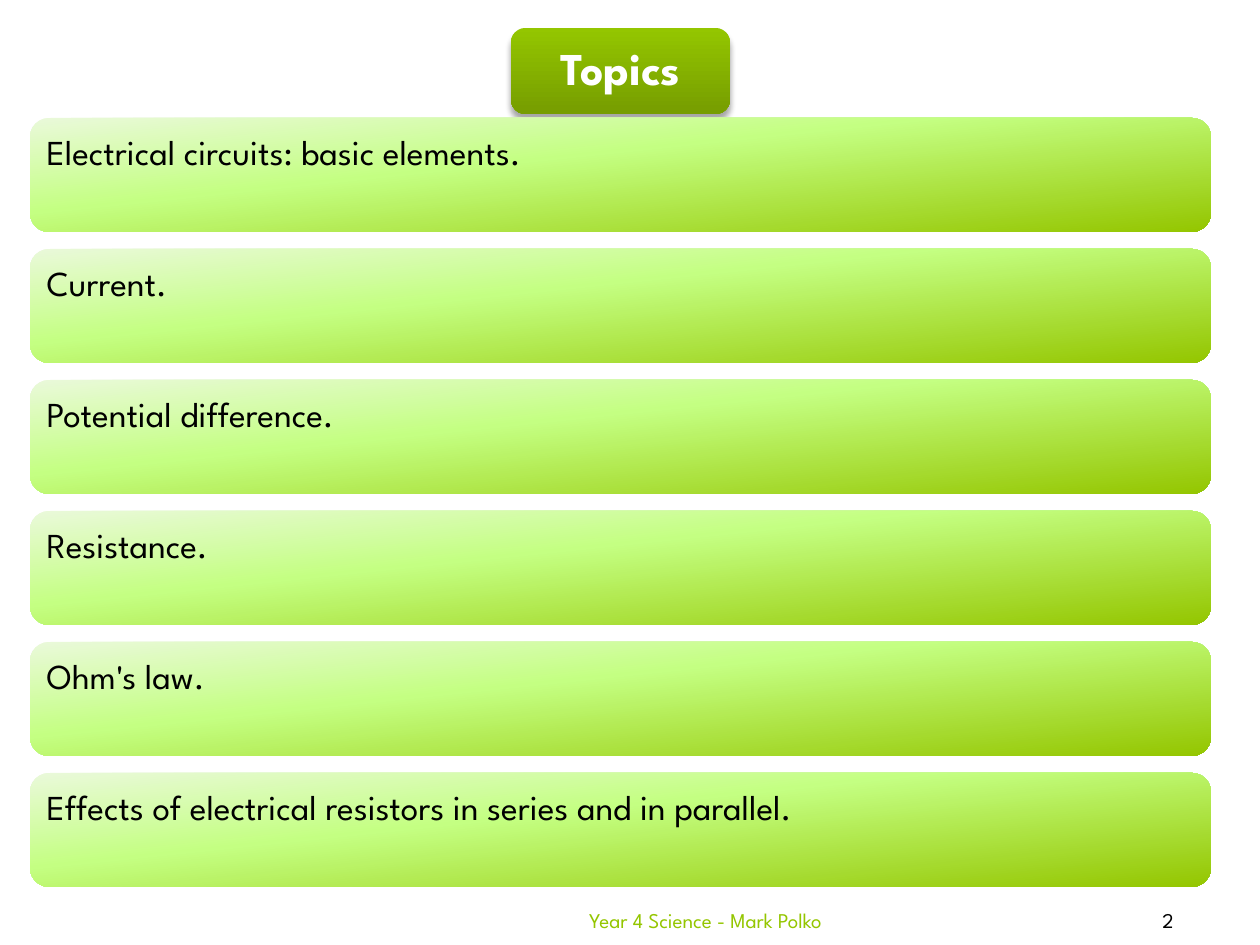
from lxml import etree
from pptx import Presentation
from pptx.dml.color import RGBColor
from pptx.enum.shapes import MSO_SHAPE
from pptx.enum.text import MSO_ANCHOR, PP_ALIGN
from pptx.oxml.ns import qn
from pptx.util import Pt

PX = 914400 // 126
FONT = "League Spartan"
ROUNDED = MSO_SHAPE.ROUNDED_RECTANGLE
TOP, MIDDLE = MSO_ANCHOR.TOP, MSO_ANCHOR.MIDDLE
LEFT, CENTER, RIGHT = PP_ALIGN.LEFT, PP_ALIGN.CENTER, PP_ALIGN.RIGHT

BLACK = RGBColor(0x00, 0x00, 0x00)
WHITE = RGBColor(0xFF, 0xFF, 0xFF)
GREEN = RGBColor(0x94, 0xC6, 0x00)
DARK_GREEN = RGBColor(0x76, 0x9D, 0x00)
PALE_GREEN = RGBColor(0xEA, 0xF9, 0xDA)
LIGHT_GREEN = RGBColor(0xC4, 0xFF, 0x82)

TOPICS = [
    "Electrical circuits: basic elements.",
    "Current.",
    "Potential difference.",
    "Resistance.",
    "Ohm's law.",
    "Effects of electrical resistors in series and in parallel.",
]


def add_panel(left, top, width, height, stops, angle):
    """Add a rounded panel; the gradient angle runs clockwise in degrees."""
    panel = slide.shapes.add_shape(ROUNDED, left * PX, top * PX, width * PX, height * PX)
    panel.shadow.inherit = False
    panel.line.fill.background()
    panel.fill.gradient()
    panel.fill.gradient_angle = 360 - angle
    stop_list = panel._element.spPr.find(".//" + qn("a:gsLst"))
    for old_stop in list(stop_list):
        stop_list.remove(old_stop)
    for percent, color in stops:
        stop = etree.SubElement(stop_list, qn("a:gs"), pos=str(percent * 1000))
        etree.SubElement(stop, qn("a:srgbClr"), val=str(color))
    return panel


def write(shape, text, size, color, align, anchor, insets, bold=False, spacing=1.0):
    """Fill a shape with one formatted line; insets are left, top, right, bottom."""
    frame = shape.text_frame
    frame.word_wrap = True
    frame.vertical_anchor = anchor
    frame.margin_left, frame.margin_top, frame.margin_right, frame.margin_bottom = (
        inset * PX for inset in insets)
    para = frame.paragraphs[0]
    para.alignment = align
    para.line_spacing = spacing
    span = para.add_run()
    span.text = text
    span.font.name = FONT
    span.font.size = Pt(size)
    span.font.bold = bold
    span.font.color.rgb = color


deck = Presentation()
deck.slide_width, deck.slide_height = 1260 * PX, 945 * PX
slide = deck.slides.add_slide(deck.slide_layouts[5])

# Title panel with its soft shadow
title_panel = add_panel(511, 28, 219, 86, [(0, GREEN), (100, DARK_GREEN)], 90)
effects = title_panel._element.spPr.find(qn("a:effectLst"))
shadow = etree.SubElement(effects, qn("a:outerShdw"), blurRad=str(Pt(3.5)),
                          dist=str(Pt(4)), dir="5400000", rotWithShape="0")
shadow_color = etree.SubElement(shadow, qn("a:srgbClr"), val=str(BLACK))
etree.SubElement(shadow_color, qn("a:alpha"), val="34000")

# Title, brought in front of its panel
title = slide.shapes.title
title.left, title.top, title.width, title.height = 515 * PX, 32 * PX, 211 * PX, 78 * PX
write(title, "Topics", 26, WHITE, CENTER, MIDDLE, (14, 14, 14, 14), bold=True, spacing=0.9)
slide.shapes._spTree.append(title._element)

# Topic bars
bar_stops = [(0, PALE_GREEN), (40, LIGHT_GREEN), (100, GREEN)]
for row, topic in enumerate(TOPICS):
    bar = add_panel(30, 118 + row * 131, 1181, 114, bar_stops, 84)
    write(bar, topic, 20, BLACK, LEFT, TOP, (11, 12, 11, 10), spacing=0.9)

# Footer and slide number
for left, width, text, color, align in [
    (521, 314, "Year 4 Science - Mark Polko", GREEN, RIGHT),
    (1076, 184, "2", BLACK, CENTER),
]:
    box = slide.shapes.add_textbox(left * PX, 895 * PX, width * PX, 50 * PX)
    write(box, text, 12, color, align, MIDDLE, (13, 6, 13, 6))

deck.save("out.pptx")
